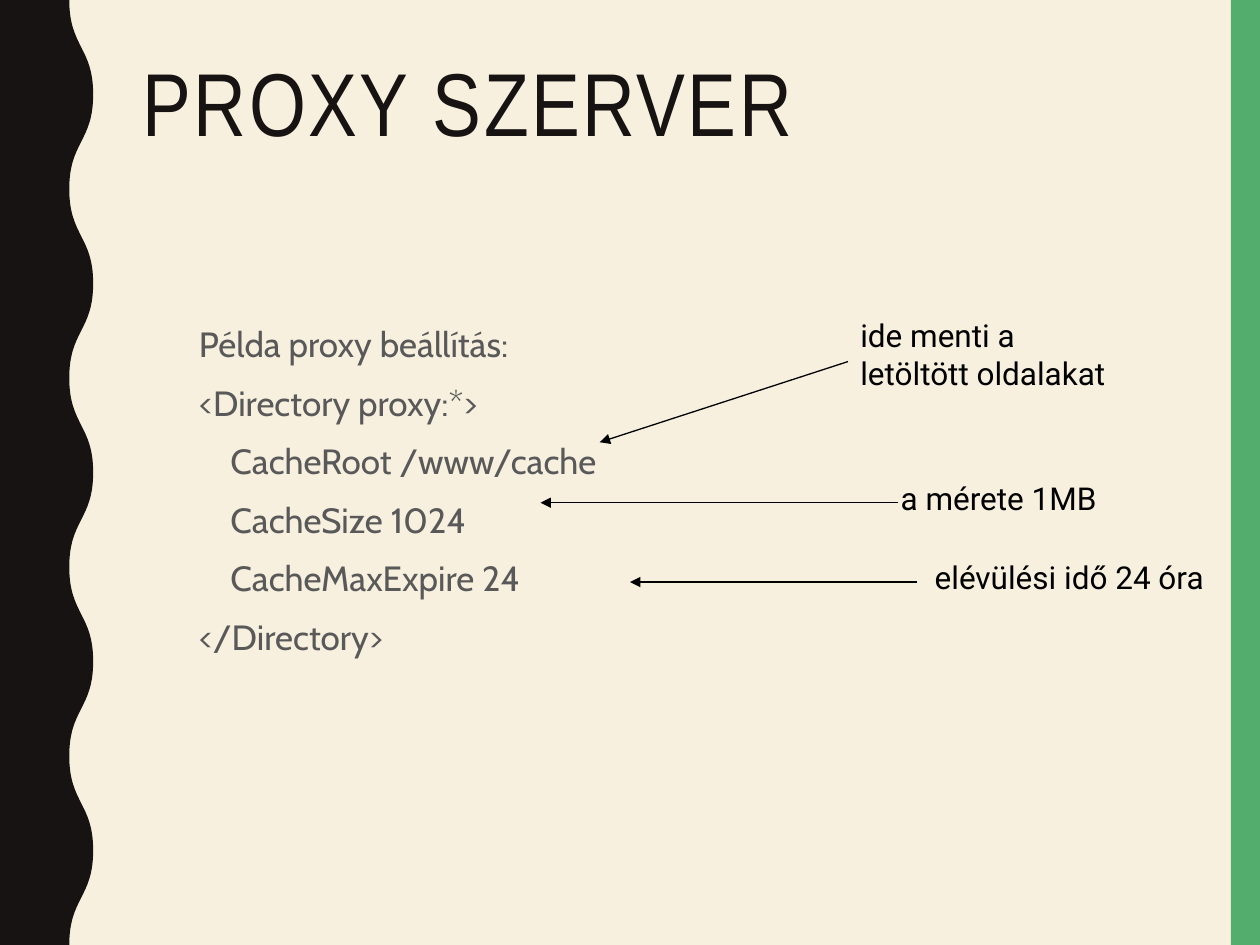
from pptx import Presentation
from pptx.dml.color import RGBColor
from pptx.enum.shapes import MSO_CONNECTOR, MSO_SHAPE
from pptx.enum.text import MSO_ANCHOR, MSO_AUTO_SIZE, PP_ALIGN
from pptx.oxml.ns import qn
from pptx.util import Inches, Pt
from lxml import etree

RECT = MSO_SHAPE.RECTANGLE
STRAIGHT = MSO_CONNECTOR.STRAIGHT
TOP, LEFT = MSO_ANCHOR.TOP, PP_ALIGN.LEFT
NO_FIT = MSO_AUTO_SIZE.NONE

CREAM = RGBColor(0xF7, 0xF0, 0xDF)
GREEN = RGBColor(0x53, 0xAE, 0x6E)
DARK = RGBColor(0x17, 0x13, 0x12)
GREY = RGBColor(0x59, 0x59, 0x59)
BLACK = RGBColor(0, 0, 0)

WIDE, HIGH = 10, 7.5
TITLE = "PROXY SZERVER"
CODE = [
    "Példa proxy beállítás:",
    "<Directory proxy:*>",
    "\tCacheRoot /www/cache",
    "\tCacheSize 1024",
    "\tCacheMaxExpire 24",
    "</Directory>",
]
# text, box, arrow start, arrow end
NOTES = [
    ("ide menti a letöltött oldalakat", (6.73, 2.46, 2.16, 0.7), (6.73, 2.87), (4.76, 3.51)),
    ("a mérete 1MB", (7.05, 3.75, 2.16, 0.4), (7.13, 3.99), (4.29, 3.99)),
    ("elévülési idő 24 óra", (7.32, 4.38, 2.56, 0.4), (7.28, 4.62), (5, 4.62)),
]
# wavy edge, in thousandths of an inch
UNIT = 1000
WAVE_IN, WAVE_OUT, WAVE_STEP, BENDS = 550, 740, 750, 10


def inches(*values):
    return [Inches(v) for v in values]


def write(shape, lines, font, size, color, space=1.0, before=0, hang=0, track=0):
    frame = shape.text_frame
    frame.word_wrap = True
    frame.auto_size = NO_FIT
    frame.vertical_anchor = TOP
    for i, line in enumerate(lines):
        para = frame.add_paragraph() if i else frame.paragraphs[0]
        para.alignment = LEFT
        para.line_spacing = space
        para.space_before = Pt(before)
        if hang:
            props = para._p.get_or_add_pPr()
            props.set("marL", str(Inches(hang)))
            props.set("indent", str(-Inches(hang)))
        run = para.add_run()
        run.text = line
        run.font.name = font
        run.font.size = Pt(size)
        run.font.color.rgb = color
        if track:
            run._r.get_or_add_rPr().set("spc", str(int(track * 100)))


def paint(shape, color):
    shape.shadow.inherit = False
    shape.fill.solid()
    shape.fill.fore_color.rgb = color
    shape.line.fill.background()


def add_wave(shapes):
    """Draw the left band, then bend the straight steps of its right edge."""
    knots = [(WAVE_OUT if i % 2 else WAVE_IN, i * WAVE_STEP) for i in range(BENDS + 1)]
    pen = shapes.build_freeform(*knots[0], scale=Inches(1) / UNIT)
    pen.add_line_segments(knots[1:] + [(0, BENDS * WAVE_STEP), (0, 0)], close=True)
    band = pen.convert_to_shape()
    steps = list(band._element.iter(qn("a:lnTo")))
    for step, (x1, y1), (x2, y2) in zip(steps, knots, knots[1:]):
        middle = (y1 + y2) // 2
        curve = etree.Element(qn("a:cubicBezTo"))
        for x, y in ((x1, middle), (x2, middle), (x2, y2)):
            etree.SubElement(curve, qn("a:pt"), x=str(x), y=str(y))
        step.getparent().replace(step, curve)
    return band


def add_arrow(shapes, start, end):
    arrow = shapes.add_connector(STRAIGHT, *inches(*start, *end))
    arrow.line.color.rgb = BLACK
    arrow.line.width = Pt(0.75)
    etree.SubElement(arrow.line._get_or_add_ln(), qn("a:tailEnd"), type="triangle")
    etree.SubElement(arrow._element.spPr, qn("a:effectLst"))


def main():
    deck = Presentation()
    deck.slide_width, deck.slide_height = inches(WIDE, HIGH)
    slide = deck.slides.add_slide(deck.slide_layouts.get_by_name("Title Only"))
    slide.background.fill.solid()
    slide.background.fill.fore_color.rgb = CREAM
    shapes = slide.shapes

    paint(shapes.add_shape(RECT, *inches(9.77, 0, 0.23, HIGH)), GREEN)
    paint(add_wave(shapes), DARK)

    title = shapes.title
    title.left, title.top, title.width, title.height = inches(1.03, 0.42, 8.35, 1.63)
    write(title, [TITLE], "Arial Narrow", 51, DARK, space=0.9, track=1.5)

    code = shapes.add_textbox(*inches(1.48, 2.48, 5.71, 4.21))
    write(code, CODE, "Cabin", 20, GREY, space=1.1, before=7, hang=0.25)

    for text, box, start, end in NOTES:
        add_arrow(shapes, start, end)
        write(shapes.add_textbox(*inches(*box)), [text], "Roboto", 18, BLACK)

    deck.save("out.pptx")


if __name__ == "__main__":
    main()
